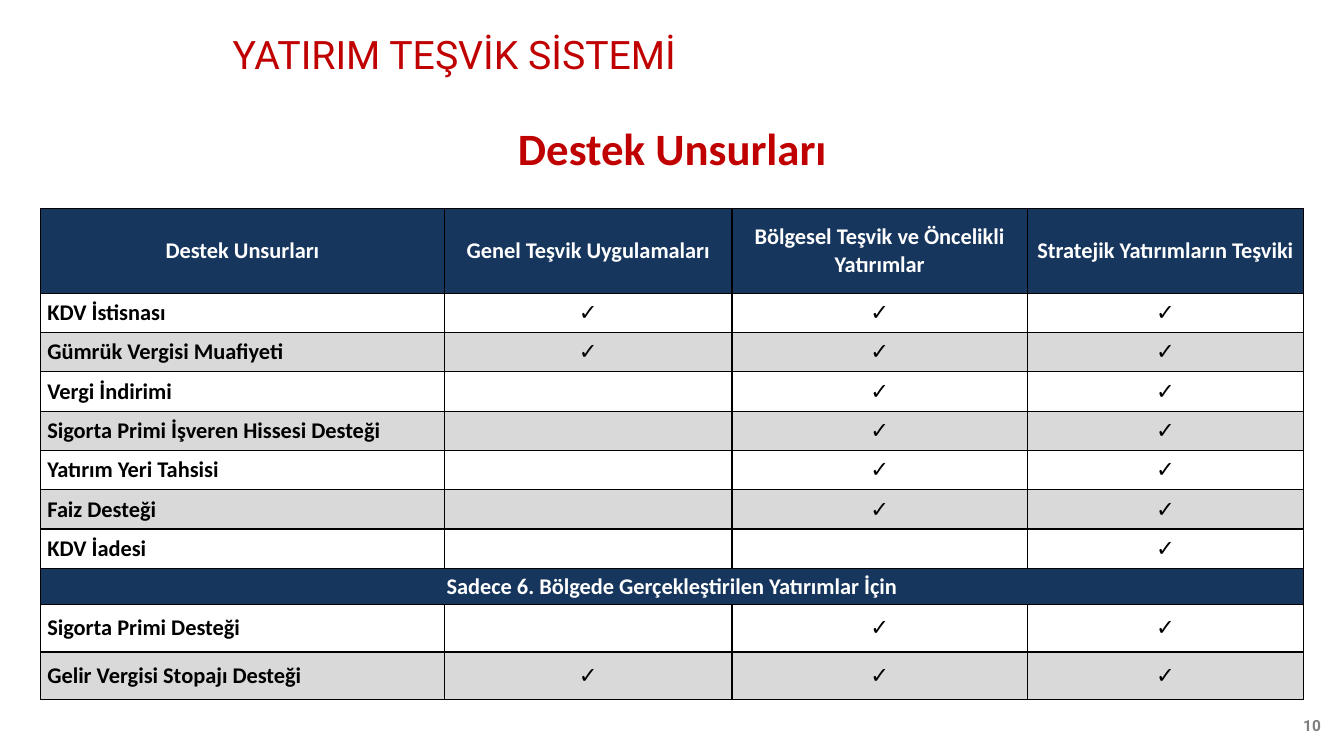
import pptx
import pptx.util
import pptx.dml.color
import pptx.enum.shapes
import pptx.enum.text
import pptx.oxml
import pptx.oxml.ns

# Content
TITLE = "YATIRIM TEŞVİK SİSTEMİ"
HEADING = "Destek Unsurları"
PAGE = "10"
HEAD = ["Destek Unsurları", "Genel Teşvik Uygulamaları",
        "Bölgesel Teşvik ve Öncelikli Yatırımlar",
        "Stratejik Yatırımların Teşviki"]
# Each support, with the number of schemes that offer it, counted from the right
MAIN = [("KDV İstisnası", 3), ("Gümrük Vergisi Muafiyeti", 3),
        ("Vergi İndirimi", 2), ("Sigorta Primi İşveren Hissesi Desteği", 2),
        ("Yatırım Yeri Tahsisi", 2), ("Faiz Desteği", 2), ("KDV İadesi", 1)]
BAND = "Sadece 6. Bölgede Gerçekleştirilen Yatırımlar İçin"
SIXTH = [("Sigorta Primi Desteği", 2), ("Gelir Vergisi Stopajı Desteği", 3)]
TICK = "✓"

COLS = [4.01, 2.85, 2.93, 2.74]
HIGH = [0.84] + [0.39] * len(MAIN) + [0.36] + [0.47] * len(SIXTH)
HEX = {"red": "C00000", "navy": "17365D", "gray": "D9D9D9",
       "white": "FFFFFF", "black": "000000", "page": "7F7F7F"}

Inches, Pt = pptx.util.Inches, pptx.util.Pt
ALIGN = pptx.enum.text.PP_ALIGN
MIDDLE = pptx.enum.text.MSO_ANCHOR.MIDDLE


def color(name):
    return pptx.dml.color.RGBColor.from_string(HEX[name])


def write(frame, text, size, tint, bold=False, align=ALIGN.LEFT, face="Calibri"):
    frame.text = text
    para = frame.paragraphs[0]
    para.alignment = align
    for run in para.runs:
        run.font.name, run.font.size, run.font.bold = face, Pt(size), bold
        run.font.color.rgb = color(tint)
    return para


def label(box, *args, **style):
    frame = slide.shapes.add_textbox(*map(Inches, box)).text_frame
    frame.word_wrap = True
    frame.vertical_anchor = MIDDLE
    return write(frame, *args, **style)


def border(cell):
    props = cell._tc.get_or_add_tcPr()
    for side in "LRTB":
        props.append(pptx.oxml.parse_xml(
            f'<a:ln{side} {pptx.oxml.ns.nsdecls("a")} w="12700"><a:solidFill>'
            f'<a:srgbClr val="{HEX["black"]}"/></a:solidFill></a:ln{side}>'))


deck = pptx.Presentation()
deck.slide_width, deck.slide_height = Inches(13.33), Inches(7.5)
slide = deck.slides.add_slide(deck.slide_layouts[6])

# Page number and title
label((12.77, 7.07, 0.43, 0.25), PAGE, 11, "page", bold=True,
      align=ALIGN.RIGHT, face="Roboto")
label((2.21, 0.16, 11.5, 0.8), TITLE, 28, "red", face="Roboto").line_spacing = 0.9

# Heading
head = slide.shapes.add_shape(pptx.enum.shapes.MSO_SHAPE.ROUNDED_RECTANGLE,
                              *map(Inches, (1.23, 1.13, 10.88, 0.67)))
head.shadow.inherit = False
head.fill.background()
head.line.fill.background()
write(head.text_frame, HEADING, 32, "red", bold=True, align=ALIGN.CENTER)


# Table of supports
def ticks(items):
    return [[name] + [""] * (3 - count) + [TICK] * count for name, count in items]


rows = [HEAD] + ticks(MAIN) + [[BAND, "", "", ""]] + ticks(SIXTH)
band = len(MAIN) + 1
table = slide.shapes.add_table(len(rows), len(COLS), Inches(0.4), Inches(2.07),
                               Inches(sum(COLS)), Inches(sum(HIGH))).table
for col, width in zip(table.columns, COLS):
    col.width = Inches(width)
for row, height in zip(table.rows, HIGH):
    row.height = Inches(height)
table.cell(band, 0).merge(table.cell(band, len(COLS) - 1))

for r, row in enumerate(rows):
    dark = r in (0, band)
    fill = "navy" if dark else "white" if r % 2 else "gray"
    for c, text in enumerate(row):
        cell = table.cell(r, c)
        border(cell)
        cell.fill.solid()
        cell.fill.fore_color.rgb = color(fill)
        cell.vertical_anchor = MIDDLE
        cell.margin_left = cell.margin_right = Inches(0.07)
        cell.margin_top = cell.margin_bottom = 0
        if text:
            write(cell.text_frame, text, 16, "white" if dark else "black",
                  bold=dark or c == 0,
                  align=ALIGN.CENTER if dark or c else ALIGN.LEFT)

deck.save("out.pptx")
